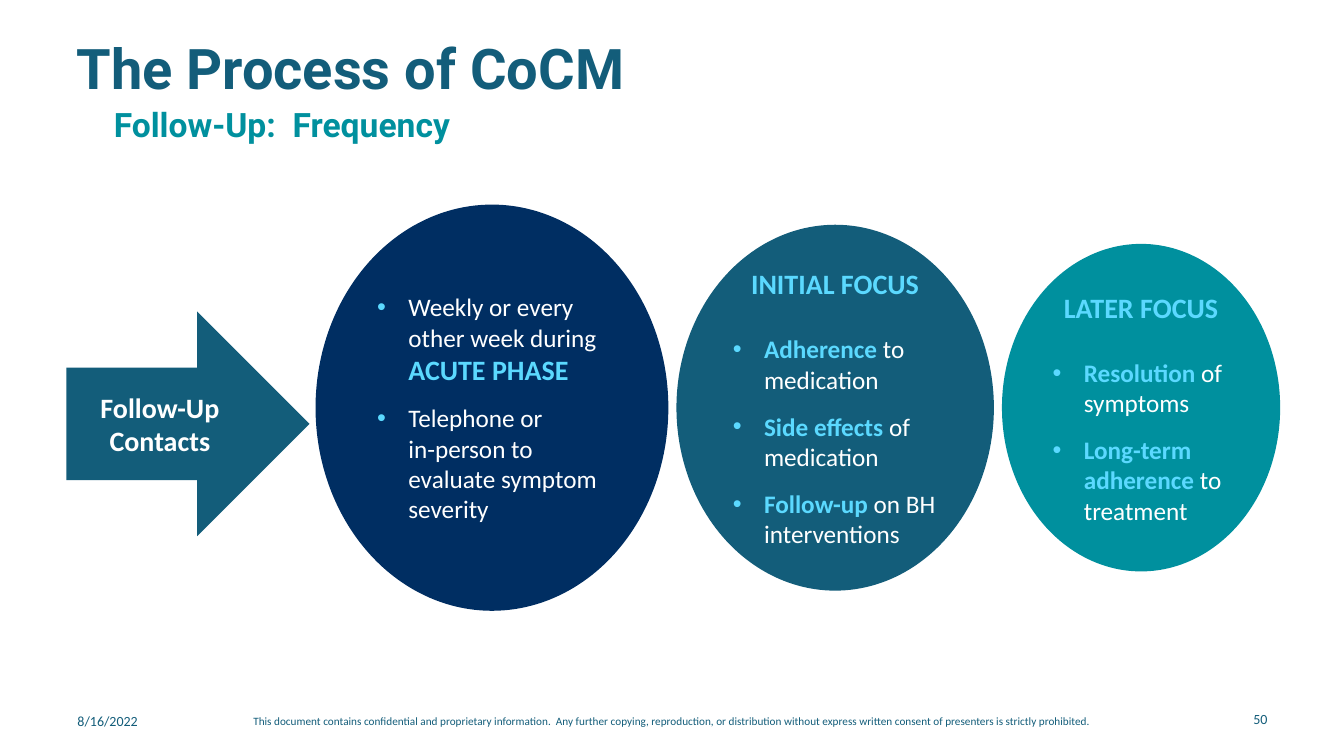
from dataclasses import dataclass

from lxml import etree
from pptx import Presentation
from pptx.dml.color import RGBColor
from pptx.enum.shapes import MSO_SHAPE
from pptx.enum.text import MSO_ANCHOR, PP_ALIGN
from pptx.oxml.ns import qn
from pptx.util import Inches, Pt

ARROW, ELLIPSE = MSO_SHAPE.RIGHT_ARROW, MSO_SHAPE.OVAL
TOP, MIDDLE, BOTTOM = MSO_ANCHOR.TOP, MSO_ANCHOR.MIDDLE, MSO_ANCHOR.BOTTOM
LEFT, CENTER, RIGHT = PP_ALIGN.LEFT, PP_ALIGN.CENTER, PP_ALIGN.RIGHT

SLIDE_WIDTH, SLIDE_HEIGHT = Inches(13.33), Inches(7.5)


@dataclass(frozen=True)
class Theme:
    heading_font: str = "Roboto"
    body_font: str = "Calibri"
    navy: str = "002E62"
    blue: str = "135D7A"
    teal: str = "00909E"
    sky: str = "5BD9FF"
    white: str = "FFFFFF"
    title: int = 40
    subtitle: int = 24
    label: int = 20
    body: int = 18
    footer: int = 10
    notice: int = 8


THEME = Theme()

# Ellipses: fill, width and height in percent of the slide, heading, bullets.
# A bullet is a list of (text, style) spans.
PHASES = [
    (THEME.navy, 26.25, 53.73, None, [
        [("Weekly or every other week during ", "plain"), ("ACUTE PHASE", "label")],
        [("Telephone or \nin-person to evaluate symptom severity", "plain")],
    ]),
    (THEME.blue, 23.62, 48.4, "INITIAL FOCUS", [
        [("Adherence", "strong"), (" to medication", "plain")],
        [("Side effects ", "strong"), ("of medication", "plain")],
        [("Follow-up", "strong"), (" on BH interventions", "plain")],
    ]),
    (THEME.teal, 20.7, 43.33, "LATER FOCUS", [
        [("Resolution", "strong"), (" of symptoms", "plain")],
        [("Long-term adherence ", "strong"), ("to treatment", "plain")],
    ]),
]
PHASES_LEFT, PHASES_MIDDLE, PHASE_GAP = 23.48, 53.93, 0.6


def place(left, top, width, height):
    """Turn percentages of the slide into lengths."""
    return (int(SLIDE_WIDTH * left / 100), int(SLIDE_HEIGHT * top / 100),
            int(SLIDE_WIDTH * width / 100), int(SLIDE_HEIGHT * height / 100))


def set_font(font, size, color, bold=False, name=THEME.body_font):
    font.name, font.size, font.bold = name, Pt(size), bold
    font.color.rgb = RGBColor.from_string(color)


def add_label(page, area, text, size, color, align=LEFT, anchor=TOP,
              bold=False, name=THEME.body_font, line_spacing=None):
    frame = page.shapes.add_textbox(*place(*area)).text_frame
    frame.word_wrap, frame.vertical_anchor = True, anchor
    para = frame.paragraphs[0]
    para.text, para.alignment, para.line_spacing = text, align, line_spacing
    set_font(para.font, size, color, bold, name)


def add_solid(page, kind, area, fill):
    shape = page.shapes.add_shape(kind, *place(*area))
    shape.shadow.inherit = False
    shape.fill.solid()
    shape.fill.fore_color.rgb = RGBColor.from_string(fill)
    shape.line.fill.background()
    shape.text_frame.word_wrap = True
    shape.text_frame.vertical_anchor = MIDDLE
    return shape


def write_heading(para, text, color):
    para.text, para.alignment = text, CENTER
    set_font(para.font, THEME.label, color, bold=True)


def write_bullet(para, spans):
    para.alignment, para.space_after = LEFT, Pt(12)
    props = para._p.get_or_add_pPr()
    props.set("marL", str(Inches(0.31)))
    props.set("indent", str(-Inches(0.31)))
    bullet_color = etree.SubElement(props, qn("a:buClr"))
    etree.SubElement(bullet_color, qn("a:srgbClr"), val=THEME.sky)
    etree.SubElement(props, qn("a:buFont"), typeface="Arial")
    etree.SubElement(props, qn("a:buChar"), char="•")
    set_font(para.font, THEME.body, THEME.white)
    for text, style in spans:
        for number, line in enumerate(text.split("\n")):
            if number:
                para.add_line_break()
            span = para.add_run()
            span.text = line
            if style != "plain":
                size = THEME.label if style == "label" else THEME.body
                set_font(span.font, size, THEME.sky, bold=True)


def add_phase(page, area, fill, heading, bullets):
    frame = add_solid(page, ELLIPSE, area, fill).text_frame
    para = frame.paragraphs[0]
    if heading:
        write_heading(para, heading, THEME.sky)
        para.space_after = Pt(24)
        para = frame.add_paragraph()
    for number, spans in enumerate(bullets):
        write_bullet(frame.add_paragraph() if number else para, spans)


def add_phases(page):
    """Line the ellipses up on one middle line with equal gaps."""
    left = PHASES_LEFT
    for fill, width, height, heading, bullets in PHASES:
        area = (left, PHASES_MIDDLE - height / 2, width, height)
        add_phase(page, area, fill, heading, bullets)
        left += width + PHASE_GAP


def add_footer(page):
    add_label(page, (5.03, 93.6, 7.58, 5.33), "8/16/2022", THEME.footer, THEME.blue)
    add_label(page, (12.6, 93.87, 74.87, 5.33),
              "This document contains confidential and proprietary information.  "
              "Any further copying, reproduction, or distribution without express "
              "written consent of presenters is strictly prohibited.",
              THEME.notice, THEME.blue, CENTER)
    add_label(page, (87.47, 93.33, 7.58, 5.33), "50", THEME.footer, THEME.blue, RIGHT)


def main():
    deck = Presentation()
    deck.slide_width, deck.slide_height = SLIDE_WIDTH, SLIDE_HEIGHT
    page = deck.slides.add_slide(deck.slide_layouts[6])
    add_label(page, (4.95, 5.33, 88.15, 8.27), "The Process of CoCM", THEME.title,
              THEME.blue, anchor=MIDDLE, bold=True, name=THEME.heading_font,
              line_spacing=0.9)
    add_label(page, (7.73, 7.87, 87.47, 12), "Follow-Up:  Frequency", THEME.subtitle,
              THEME.teal, anchor=BOTTOM, bold=True, name=THEME.heading_font,
              line_spacing=0.9)
    arrow = add_solid(page, ARROW, (4.95, 41.2, 18.08, 29.73), THEME.blue)
    write_heading(arrow.text_frame.paragraphs[0], "Follow-Up Contacts", THEME.white)
    add_phases(page)
    add_footer(page)
    deck.save("out.pptx")


if __name__ == "__main__":
    main()
